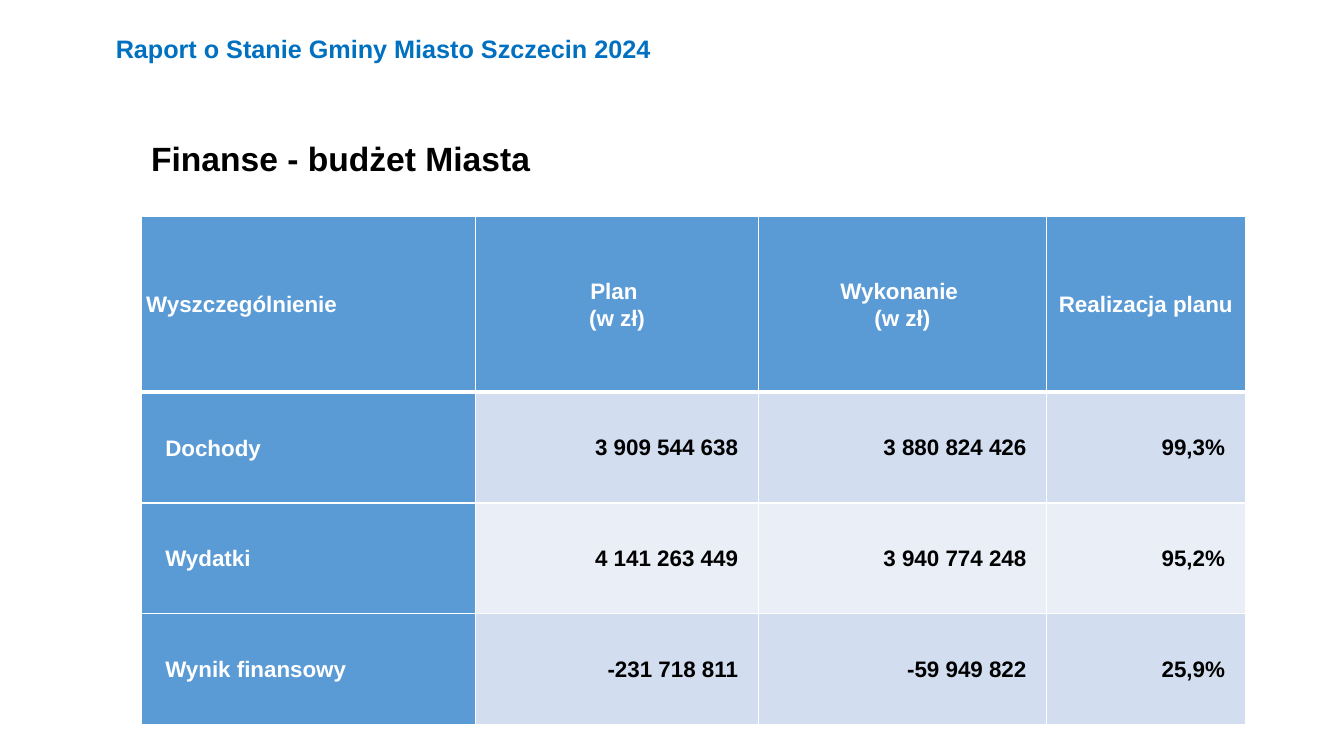
from dataclasses import dataclass
from lxml.etree import SubElement
from pptx import Presentation
from pptx.dml.color import RGBColor
from pptx.enum.text import MSO_ANCHOR, PP_ALIGN
from pptx.oxml.ns import qn
from pptx.util import Inches, Pt

PAGE_WIDTH, PAGE_HEIGHT = Inches(13.33), Inches(7.5)
GRID_COLUMNS, GRID_ROWS = 1333, 750

WHITE = RGBColor(0xFF, 0xFF, 0xFF)
BLACK = RGBColor(0x00, 0x00, 0x00)
REPORT_BLUE = RGBColor(0x00, 0x70, 0xC0)
HEADER_BLUE = RGBColor(0x5B, 0x9B, 0xD5)
BAND_DARK = RGBColor(0xD2, 0xDE, 0xEF)
BAND_LIGHT = RGBColor(0xEA, 0xEF, 0xF7)

COLUMN_SPANS = (332, 280, 286, 197)
HEADER_SPAN, BODY_SPAN = 174, 110
BUDGET = (
    ("Wyszczególnienie", "Plan \n(w zł)", "Wykonanie \n(w zł)", "Realizacja planu"),
    ("Dochody", "3 909 544 638", "3 880 824 426", "99,3%"),
    ("Wydatki", "4 141 263 449", "3 940 774 248", "95,2%"),
    ("Wynik finansowy", "-231 718 811", "-59 949 822", "25,9%"),
)


@dataclass(frozen=True)
class Heading:
    text: str
    left: int
    top: int
    width: int
    height: int
    size: int
    color: RGBColor
    line_spacing: float = 1.0
    space_after: int = 0


@dataclass(frozen=True)
class CellStyle:
    fill: RGBColor
    color: RGBColor
    align: PP_ALIGN
    line_spacing: float
    insets: tuple[int, int, int, int]


HEADINGS = (
    Heading("Finanse - budżet Miasta", 140, 132, 1055, 50, 24, BLACK, space_after=6),
    Heading("Raport o Stanie Gminy Miasto Szczecin 2024", 105, 32, 734, 66, 18,
            REPORT_BLUE, line_spacing=0.9),
)


def across(columns: int) -> int:
    return round(PAGE_WIDTH * columns / GRID_COLUMNS)


def down(rows: int) -> int:
    return round(PAGE_HEIGHT * rows / GRID_ROWS)


def write(frame, text: str, *, size: int, color: RGBColor,
          align: PP_ALIGN = PP_ALIGN.LEFT, line_spacing: float = 1.0,
          space_after: int = 0) -> None:
    frame.word_wrap = True
    para = frame.paragraphs[0]
    para.text = text
    para.alignment = align
    para.line_spacing = line_spacing
    para.space_after = Pt(space_after)
    for span in para.runs:
        span.font.name = "Arial"
        span.font.size = Pt(size)
        span.font.bold = True
        span.font.color.rgb = color


def add_heading(page, heading: Heading) -> None:
    box = page.shapes.add_textbox(across(heading.left), down(heading.top),
                                  across(heading.width), down(heading.height))
    write(box.text_frame, heading.text, size=heading.size, color=heading.color,
          line_spacing=heading.line_spacing, space_after=heading.space_after)


def style_for(row: int, column: int) -> CellStyle:
    if row == 0:
        align = PP_ALIGN.CENTER if column else PP_ALIGN.LEFT
        return CellStyle(HEADER_BLUE, WHITE, align, 1.07, (5, 0, 5, 0))
    if column == 0:
        return CellStyle(HEADER_BLUE, WHITE, PP_ALIGN.LEFT, 1.07, (24, 0, 5, 0))
    band = BAND_DARK if row % 2 else BAND_LIGHT
    return CellStyle(band, BLACK, PP_ALIGN.RIGHT, 1.0, (1, 1, 20, 0))


def add_borders(cell, row: int) -> None:
    properties = cell._tc.get_or_add_tcPr()
    widths = {"lnL": 1, "lnR": 1, "lnT": 3 if row == 1 else 1, "lnB": 3 if row == 0 else 1}
    for side, width in widths.items():
        line = SubElement(properties, qn(f"a:{side}"), w=str(Pt(width)))
        fill = SubElement(line, qn("a:solidFill"))
        SubElement(fill, qn("a:srgbClr"), val=str(WHITE))


def format_cell(cell, text: str, row: int, column: int) -> None:
    style = style_for(row, column)
    left, top, right, bottom = style.insets
    cell.margin_left, cell.margin_right = across(left), across(right)
    cell.margin_top, cell.margin_bottom = down(top), down(bottom)
    cell.vertical_anchor = MSO_ANCHOR.MIDDLE
    add_borders(cell, row)
    cell.fill.solid()
    cell.fill.fore_color.rgb = style.fill
    write(cell.text_frame, text, size=16, color=style.color, align=style.align,
          line_spacing=style.line_spacing)


def add_budget(page) -> None:
    row_spans = (HEADER_SPAN,) + (BODY_SPAN,) * (len(BUDGET) - 1)
    table = page.shapes.add_table(len(row_spans), len(COLUMN_SPANS), across(140), down(215),
                                  across(sum(COLUMN_SPANS)), down(sum(row_spans))).table
    for column, span in zip(table.columns, COLUMN_SPANS):
        column.width = across(span)
    for row, span in zip(table.rows, row_spans):
        row.height = down(span)
    for row, texts in enumerate(BUDGET):
        for column, text in enumerate(texts):
            format_cell(table.cell(row, column), text, row, column)


def main() -> None:
    deck = Presentation()
    deck.slide_width, deck.slide_height = PAGE_WIDTH, PAGE_HEIGHT
    page = deck.slides.add_slide(deck.slide_layouts[6])
    for heading in HEADINGS:
        add_heading(page, heading)
    add_budget(page)
    deck.save("out.pptx")


if __name__ == "__main__":
    main()
